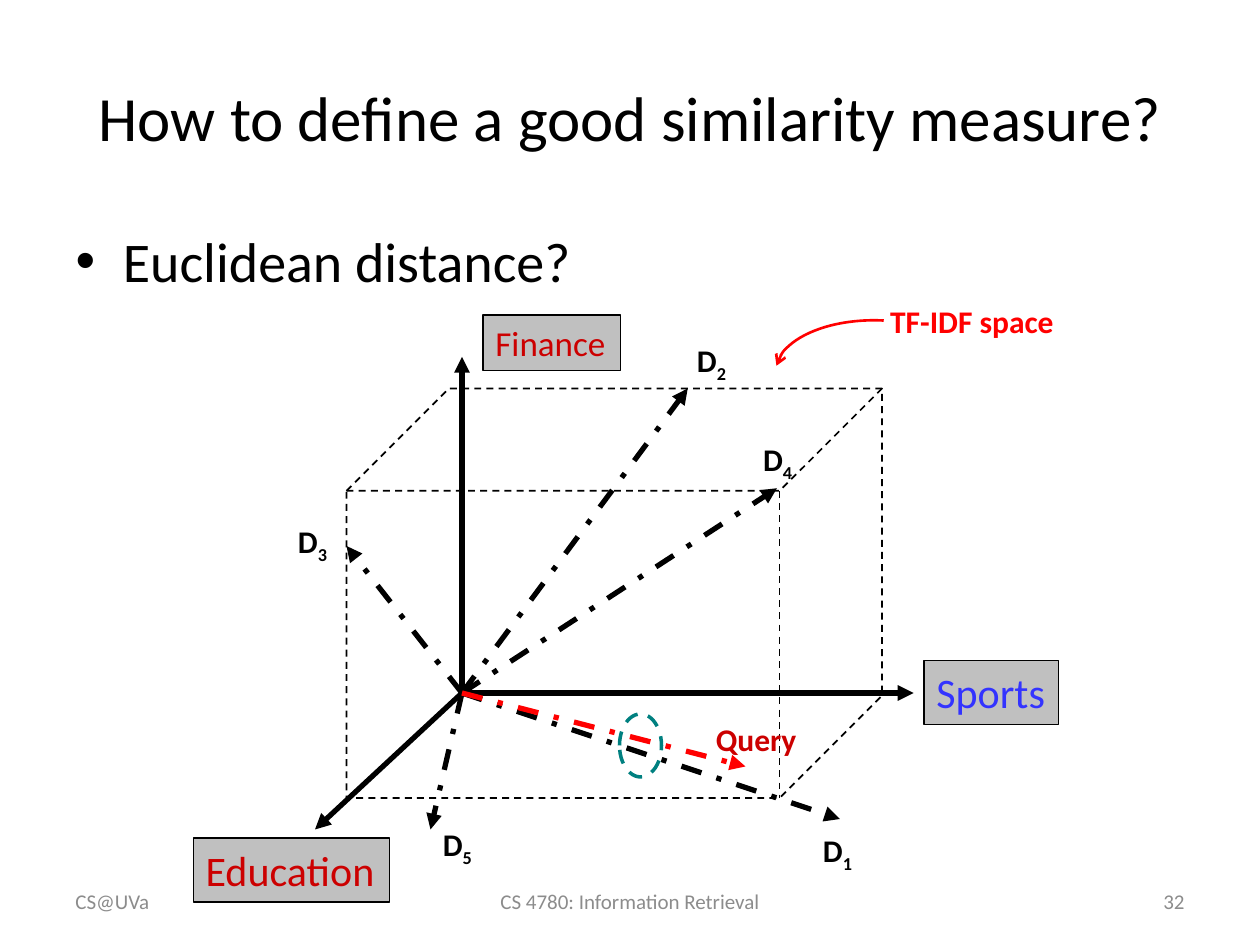
from lxml import etree
from pptx import Presentation
from pptx.dml.color import RGBColor
from pptx.enum.dml import MSO_LINE
from pptx.enum.shapes import MSO_CONNECTOR, MSO_SHAPE
from pptx.enum.text import MSO_ANCHOR, MSO_AUTO_SIZE, PP_ALIGN
from pptx.oxml.ns import qn
from pptx.util import Inches, Pt

CUBE, RECT, OVAL, ARC = MSO_SHAPE.CUBE, MSO_SHAPE.RECTANGLE, MSO_SHAPE.OVAL, MSO_SHAPE.ARC
DASH, DOT = MSO_LINE.DASH, MSO_LINE.DASH_DOT
LEFT, MID, RIGHT = PP_ALIGN.LEFT, PP_ALIGN.CENTER, PP_ALIGN.RIGHT
TOP, CENTER = MSO_ANCHOR.TOP, MSO_ANCHOR.MIDDLE
FONT = "Calibri"
CELL = Inches(10) / 120


def grid(*cells):
    return [round(cell * CELL) for cell in cells]


def inset(box, x, y, wide, high):
    return box[0] + x, box[1] + y, wide, high


def color(code):
    return RGBColor.from_string(code)


def write(shape, text, size=18, ink="000000", bold=False, sub="",
          align=LEFT, anchor=TOP, wrap=False):
    frame = shape.text_frame
    frame.word_wrap = wrap
    frame.auto_size = MSO_AUTO_SIZE.NONE
    frame.vertical_anchor = anchor
    para = frame.paragraphs[0]
    para.alignment = align
    for part in filter(None, (text, sub)):
        run = para.add_run()
        run.text = part
        font = run.font
        font.name, font.size, font.bold = FONT, Pt(size), bold
        font.color.rgb = color(ink)
    if sub:
        font._element.set("baseline", "-25000")


def label(slide, box, text, **style):
    write(slide.shapes.add_textbox(*grid(*box)), text, **style)


def stroke(line, ink, width, dash=None):
    line.color.rgb = color(ink)
    line.width = Pt(width)
    if dash:
        line.dash_style = dash


def tip(shape, end, kind):
    line = shape.line._get_or_add_ln()
    etree.SubElement(line, qn("a:" + end), type=kind)


def draw(slide, kind, box, ink, width, dash=None, fill=None):
    shape = slide.shapes.add_shape(kind, *grid(*box))
    shape.shadow.inherit = False
    if fill:
        shape.fill.solid()
        shape.fill.fore_color.rgb = color(fill)
    else:
        shape.fill.background()
    stroke(shape.line, ink, width, dash)
    return shape


def arrow(slide, start, end, ink="000000", dash=None):
    line = slide.shapes.add_connector(MSO_CONNECTOR.STRAIGHT, *grid(*start, *end))
    stroke(line.line, ink, 3, dash)
    tip(line, "tailEnd", "triangle")
    etree.SubElement(line._element.spPr, qn("a:effectLst"))


def heading(slide, box):
    title, body = slide.placeholders[0], slide.placeholders[1]
    parts = (
        (title, (0, 0, box[2], 15), "How to define a good similarity measure?", 36, MID, CENTER),
        (body, (0, 17.4, box[2], 59.4), "Euclidean distance?", 32, LEFT, TOP),
    )
    for holder, area, text, size, align, anchor in parts:
        place = grid(*inset(box, *area))
        holder.left, holder.top, holder.width, holder.height = place
        write(holder, text, size=size, align=align, anchor=anchor, wrap=True)


def axes(slide, box, root):
    draw(slide, CUBE, inset(box, 15, 9, 51, 39), "000000", 1, DASH)
    parts = (
        ((12, 51), "Education", (0.4, 51.8, 18.7, 6.1), 24, "CC0000"),
        ((69, 38), "Sports", (70, 34.9, 12.8, 6.1), 24, "3333FF"),
        ((26, 6), "Finance", (28, 2, 13.1, 5.3), 20, "CC0000"),
    )
    for end, text, area, size, ink in parts:
        arrow(slide, root, inset(box, *end, 0, 0)[:2])
        tag = draw(slide, RECT, inset(box, *area), "000000", 0.75, fill="C0C0C0")
        write(tag, text, size=size, ink=ink)


def vectors(slide, box, root):
    parts = (
        ("4", (56, 18.5), (53.5, 13.3)),
        ("5", (23, 51), (23, 50)),
        ("2", (47.5, 9), (47.2, 3.9)),
        ("1", (62, 50), (59.2, 50.6)),
        ("3", (15, 24), (9.2, 21.1)),
    )
    for sub, end, spot in parts:
        arrow(slide, root, inset(box, *end, 0, 0)[:2], dash=DOT)
        label(slide, inset(box, *spot, 5.5, 4.8), "D", sub=sub, bold=True)
    arrow(slide, root, inset(box, 53, 45, 0, 0)[:2], ink="FF0000", dash=DOT)
    label(slide, inset(box, 49, 40, 10.6, 4.8), "Query", ink="CC0000", bold=True)
    draw(slide, OVAL, inset(box, 41, 40, 4, 6), "008080", 2, DASH)


def callout(slide, box):
    label(slide, inset(box, 9.7, 0, 26, 4.8), "TF-IDF space",
          ink="FF0000", bold=True, wrap=True)
    curve = draw(slide, ARC, inset(box, 0, 2.3, 18.7, 9.7), "FF0000", 1.5)
    curve.adjustments[0] = 109.91
    curve.adjustments[1] = 168.48
    tip(curve, "headEnd", "arrow")


def figure(slide, box):
    root = inset(box, 26, 38, 0, 0)[:2]
    axes(slide, box, root)
    vectors(slide, box, root)
    callout(slide, inset(box, 55.9, 0.2, 36, 12))


def footer(slide, box):
    parts = (
        ("CS@UVa", 0, 28, LEFT),
        ("CS 4780: Information Retrieval", 35, 38, MID),
        ("32", 80, 28, RIGHT),
    )
    for text, x, wide, align in parts:
        label(slide, inset(box, x, 0, wide, box[3]), text, size=12, ink="8C8C8C",
              align=align, anchor=CENTER, wrap=True)


def main():
    deck = Presentation()
    deck.slide_width, deck.slide_height = grid(120, 90)
    slide = deck.slides.add_slide(deck.slide_layouts[1])
    heading(slide, (6, 3.6, 108, 76.8))
    figure(slide, (18, 28, 92, 58))
    footer(slide, (6, 83.4, 108, 4.8))
    deck.save("out.pptx")


if __name__ == "__main__":
    main()
